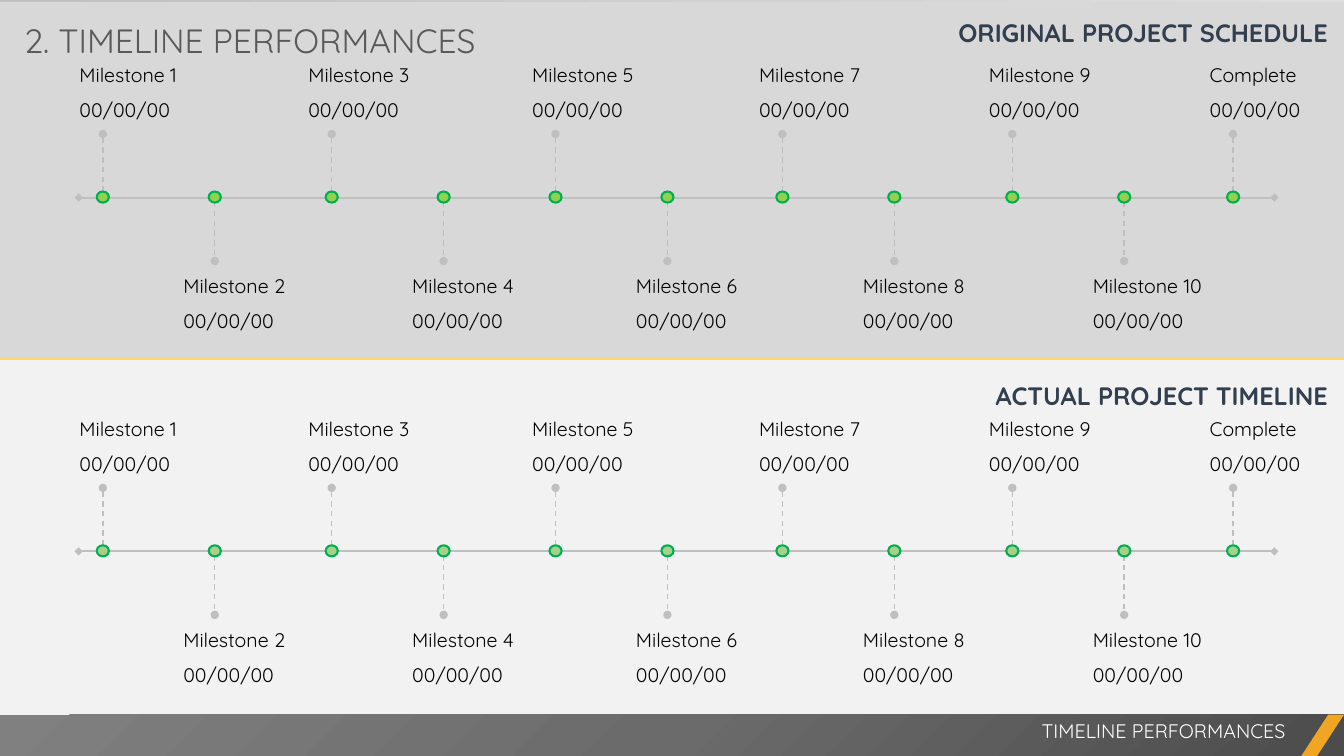
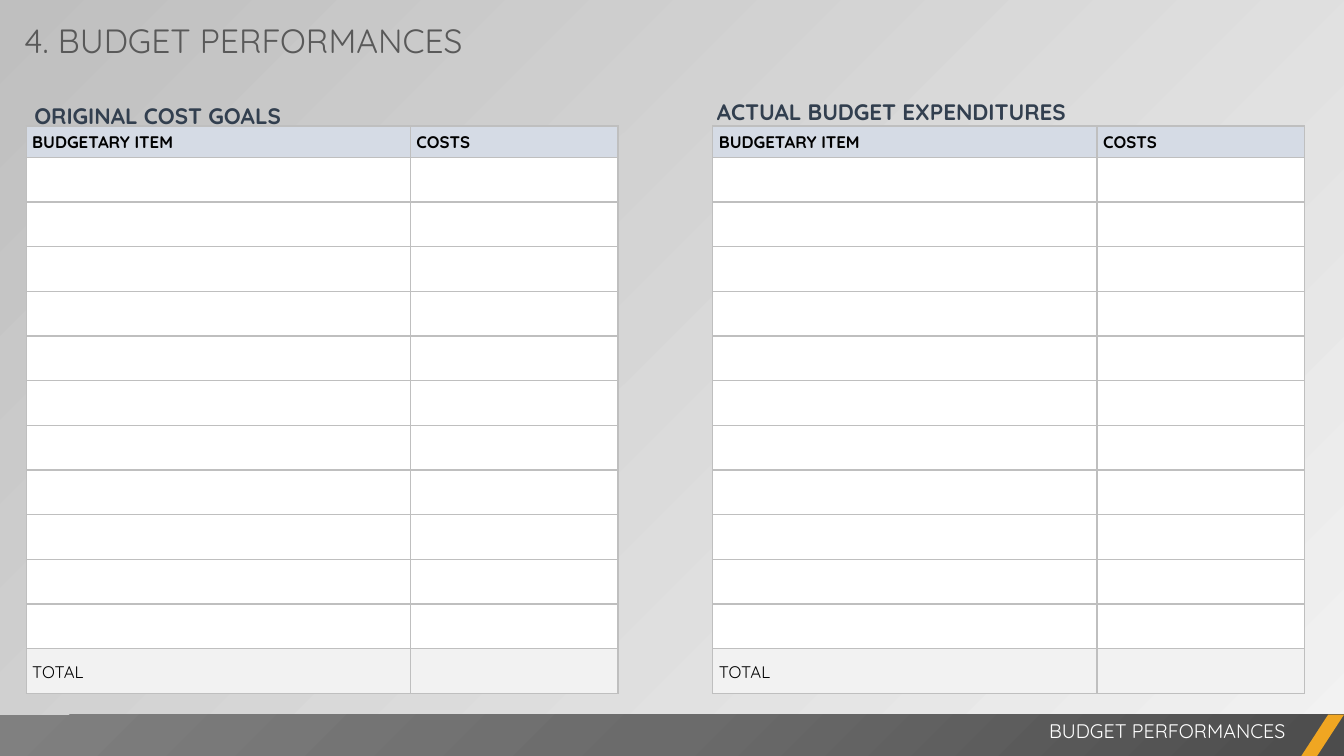
from dataclasses import dataclass
from pptx import Presentation
from pptx.dml.color import RGBColor
from pptx.enum.dml import MSO_LINE
from pptx.enum.shapes import MSO_CONNECTOR, MSO_SHAPE
from pptx.enum.text import MSO_ANCHOR, PP_ALIGN
from pptx.oxml import parse_xml
from pptx.oxml.ns import nsdecls, qn
from pptx.util import Inches, Pt


@dataclass(frozen=True)
class Theme:
    """Colours, font and type sizes of the deck."""
    font: str = "Quicksand"
    ink: str = "000000"
    white: str = "FFFFFF"
    title: str = "595959"
    head: str = "323F4F"
    rule: str = "BFBFBF"
    mid: str = "D8D8D8"
    pale: str = "F2F2F2"
    blue: str = "D5DBE5"
    gold: str = "FFD966"
    amber: str = "F0A622"
    green: str = "00B050"
    lime: str = "92D050"
    sage: str = "A8D08C"
    big: int = 24
    sub: int = 18
    cap: int = 16
    body: int = 14
    small: int = 12


T = Theme()
WIDE, HIGH = 13.33, 7.5
BACK = [(0, T.pale, 40), (100, T.rule, 100)]
BAND = [(0, "4C4C4C", 100), (50, "6B6B6B", 100), (100, "808080", 100)]
SLANT = '<a:lin ang="13500000" scaled="0"/>'
ROUND = '<a:path path="circle"><a:fillToRect l="100000" t="100000"/></a:path>'
MARKS = (1.02, 3.29, 5.51, 7.76, 10.04, 12.23)
STEP = 1.11


def rgb(code):
    """Turn a hex code into a colour."""
    return RGBColor.from_string(code)


def write(frame, lines, size=T.body, color=T.ink, bold=False,
          align=PP_ALIGN.LEFT, lead=None, gap=0):
    """Write one paragraph per line, with a gap between them."""
    frame.word_wrap = True
    for i, line in enumerate(lines):
        para = frame.add_paragraph() if i else frame.paragraphs[0]
        para.alignment = align
        para.line_spacing = lead
        para.space_before = Pt(gap if i else 0)
        run = para.add_run()
        run.text = line
        font = run.font
        font.name, font.size, font.bold = T.font, Pt(size), bold
        font.color.rgb = rgb(color)


def label(shapes, at, *lines, pad=(0.1, 0.05), **form):
    """Add a text box."""
    frame = shapes.add_textbox(*map(Inches, at)).text_frame
    frame.margin_left = frame.margin_right = Inches(pad[0])
    frame.margin_top = frame.margin_bottom = Inches(pad[1])
    write(frame, lines, **form)


def shade(fill, node, stops, way):
    """Give a fill a gradient with the stops and direction stated."""
    fill.gradient()
    old = node.find(".//" + qn("a:gradFill"))
    marks = "".join(
        f'<a:gs pos="{pos * 1000}"><a:srgbClr val="{code}">'
        f'<a:alpha val="{alpha * 1000}"/></a:srgbClr></a:gs>'
        for pos, code, alpha in stops)
    new = parse_xml(f'<a:gradFill {nsdecls("a")} rotWithShape="1">'
                    f'<a:gsLst>{marks}</a:gsLst>{way}</a:gradFill>')
    old.getparent().replace(old, new)


def block(shapes, kind, at, color, edge=None):
    """Add a filled shape, outlined if an edge colour is given."""
    shape = shapes.add_shape(kind, *map(Inches, at))
    shape.shadow.inherit = False
    shape.fill.solid()
    shape.fill.fore_color.rgb = rgb(color)
    if edge:
        shape.line.color.rgb = rgb(edge)
        shape.line.width = Pt(1.5)
    else:
        shape.line.fill.background()
    return shape


def line(shapes, ends, color, width, tip=None, dash=None):
    """Add a straight line with the same tip at both ends."""
    link = shapes.add_connector(MSO_CONNECTOR.STRAIGHT, *map(Inches, ends))
    link.line.color.rgb = rgb(color)
    link.line.width = Pt(width)
    if dash:
        link.line.dash_style = dash
    if tip:
        for tag in ("headEnd", "tailEnd"):
            link.line._get_or_add_ln().append(
                parse_xml(f'<a:{tag} {nsdecls("a")} type="{tip}"/>'))
    link.element.spPr.append(parse_xml(f'<a:effectLst {nsdecls("a")}/>'))


def stop(shapes, x, axis, name, color, above):
    """Add one milestone with its stem, dot and label."""
    ends = (x, axis - 0.63, x, axis) if above else (x, axis, x, axis + 0.63)
    line(shapes, ends, T.rule, 1, "oval", MSO_LINE.DASH)
    block(shapes, MSO_SHAPE.OVAL, (x - 0.06, axis - 0.06, 0.12, 0.11),
          color, T.green)
    left, top = (x - 0.33, axis - 1.38) if above else (x - 0.41, axis + 0.71)
    label(shapes, (left, top, 1.9, 0.64), name, "00/00/00", gap=8)


def track(slide, axis, color):
    """Add a grouped timeline with milestones above and below its axis."""
    shapes = slide.shapes.add_group_shape().shapes
    line(shapes, (0.78, axis, 12.64, axis), T.rule, 1.5, "diamond")
    last = len(MARKS) - 1
    for i, x in enumerate(MARKS):
        name = f"Milestone {2 * i + 1}" if i < last else "Complete"
        stop(shapes, x, axis, name, color, True)
        if i < last:
            stop(shapes, x + STEP, axis, f"Milestone {2 * i + 2}",
                 color, False)


def edge(cell):
    """Draw the four borders of a cell."""
    for side in "LRTB":
        cell._tc.get_or_add_tcPr().append(parse_xml(
            f'<a:ln{side} {nsdecls("a")} w="12700"><a:solidFill>'
            f'<a:srgbClr val="{T.rule}"/></a:solidFill></a:ln{side}>'))


def grid(slide, left):
    """Add an empty cost table with a header and a total row."""
    rows, top, tall, first = 13, 1.25, 5.63, 0.31
    cols = (3.81, 2.06)
    at = map(Inches, (left, top, sum(cols), tall))
    table = slide.shapes.add_table(rows, len(cols), *at).table
    table.first_row = table.horz_banding = False
    for col, width in zip(table.columns, cols):
        col.width = Inches(width)
    words = {0: ("BUDGETARY ITEM", "COSTS"), rows - 1: ("TOTAL", "")}
    fills = {0: T.blue, rows - 1: T.pale}
    for i, row in enumerate(table.rows):
        row.height = Inches((tall - first) / (rows - 1) if i else first)
        for cell, word in zip(row.cells, words.get(i, ("", ""))):
            edge(cell)
            cell.fill.solid()
            cell.fill.fore_color.rgb = rgb(fills.get(i, T.white))
            cell.vertical_anchor = MSO_ANCHOR.MIDDLE
            cell.margin_left = cell.margin_right = Inches(0.06)
            cell.margin_top = cell.margin_bottom = 0
            if word:
                write(cell.text_frame, [word], size=T.small, bold=i == 0,
                      lead=1.07)


def start(deck):
    """Add a blank slide with the shared background."""
    slide = deck.slides.add_slide(deck.slide_layouts[6])
    shade(slide.background.fill, slide.element, BACK, SLANT)
    return slide


def frame(slide, num, name):
    """Add the title and the footer band."""
    shapes, top, tall = slide.shapes, 7.09, 0.42
    band = block(shapes, MSO_SHAPE.RECTANGLE, (0, top, WIDE, tall), T.title)
    shade(band.fill, band.element, BAND, ROUND)
    slash = block(shapes, MSO_SHAPE.PARALLELOGRAM,
                  (12.9, top, 0.43, tall), T.amber)
    slash.adjustments[0] = 0.65
    label(shapes, (5.25, 7.08, 7.6, 0.34), name, color=T.white,
          align=PP_ALIGN.RIGHT)
    label(shapes, (0.14, 0.15, 4.8, 0.5), f"{num}. {name}", size=T.big,
          color=T.title)


def times(deck):
    """Build the timeline slide."""
    slide = start(deck)
    halves = (
        (0.02, 3.54, T.mid, 0.06, "ORIGINAL PROJECT SCHEDULE", 1.96, T.lime),
        (3.56, 3.96, T.pale, 3.66, "ACTUAL PROJECT TIMELINE", 5.47, T.sage))
    for top, tall, color, *rest in halves:
        block(slide.shapes, MSO_SHAPE.RECTANGLE, (-0.02, top, 13.35, tall),
              color)
    for *rest, high, name, axis, dot in halves:
        track(slide, axis, dot)
        label(slide.shapes, (8.02, high, 5.27, 0.48), name, size=T.sub,
              color=T.head, bold=True, align=PP_ALIGN.RIGHT, lead=1.19,
              pad=(0.12, 0.06))
    line(slide.shapes, (0, 3.56, WIDE, 3.56), T.gold, 2.25)
    frame(slide, 2, "TIMELINE PERFORMANCES")


def costs(deck):
    """Build the budget slide."""
    slide = start(deck)
    for left, x, y, name in (
            (0.26, 0.22, 0.86, "ORIGINAL COST GOALS"),
            (7.07, 6.99, 0.82, "ACTUAL BUDGET EXPENDITURES")):
        label(slide.shapes, (x, y, 5.58, 0.4), name, size=T.cap,
              color=T.head, bold=True, lead=1.34, pad=(0.12, 0.06))
        grid(slide, left)
    frame(slide, 4, "BUDGET PERFORMANCES")


def main():
    """Build and save the deck."""
    deck = Presentation()
    deck.slide_width, deck.slide_height = Inches(WIDE), Inches(HIGH)
    times(deck)
    costs(deck)
    deck.save("out.pptx")


if __name__ == "__main__":
    main()
